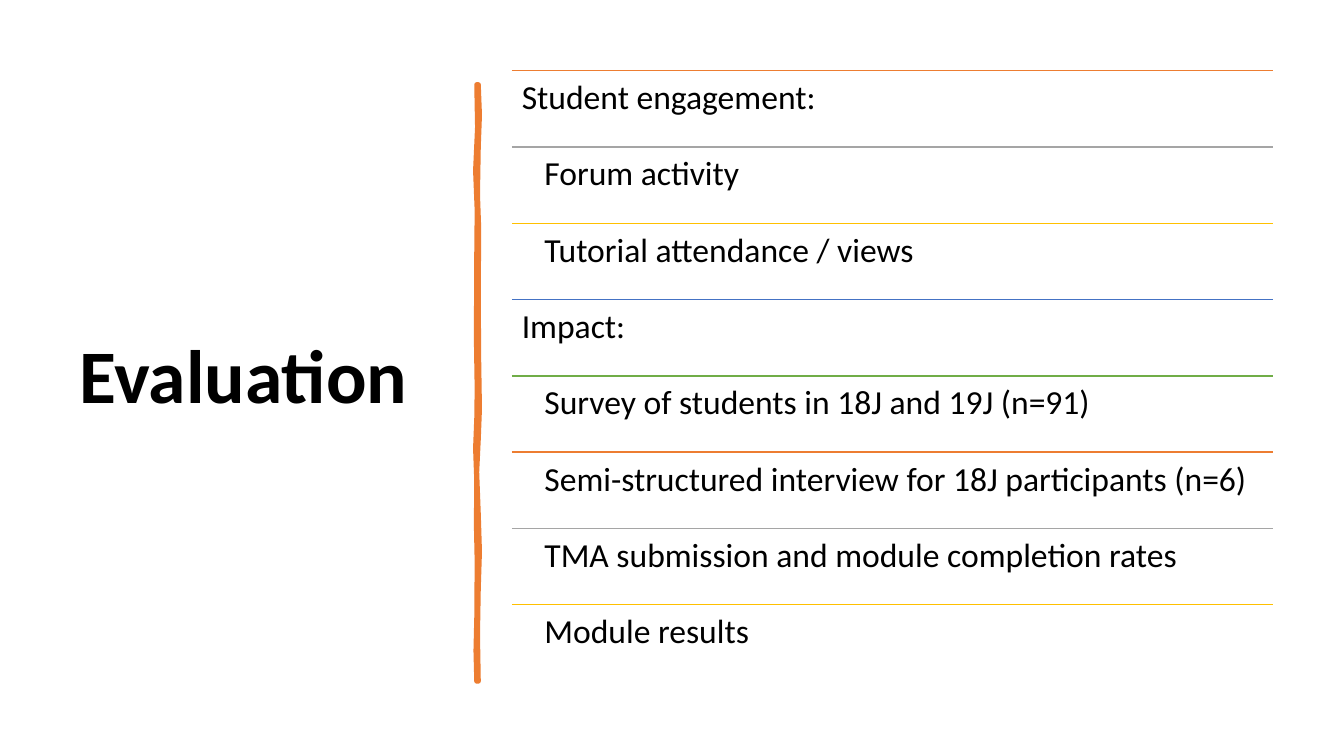
from lxml import etree
from pptx import Presentation
from pptx.dml.color import RGBColor
from pptx.enum.shapes import MSO_CONNECTOR
from pptx.enum.text import MSO_ANCHOR
from pptx.oxml.ns import qn
from pptx.util import Cm, Pt

STRAIGHT = MSO_CONNECTOR.STRAIGHT
TOP, MIDDLE = MSO_ANCHOR.TOP, MSO_ANCHOR.MIDDLE

# Content: (level, text)
TITLE = "Evaluation"
ROWS = [
    (0, "Student engagement:"),
    (1, "Forum activity"),
    (1, "Tutorial attendance / views"),
    (0, "Impact:"),
    (1, "Survey of students in 18J and 19J (n=91)"),
    (1, "Semi-structured interview for 18J participants (n=6)"),
    (1, "TMA submission and module completion rates"),
    (1, "Module results"),
]

# Theme
THEME = {
    "font": "Calibri",
    "ink": "000000",
    "bar": "ED7D31",
    "rules": ["ED7D31", "A5A5A5", "FFC000", "4472C4", "70AD47"],
    "title": 54,
    "body": 24,
}

# Layout in cm
LEFT, WIDTH = 12.9, 19.18
HEAD, FOOT = 1.78, 17.16
STEP = (FOOT - HEAD) / len(ROWS)
INSET, INDENT = 0.25, 0.57

# Hand-drawn bar: (x, y) down the right edge, then up the left edge
RIGHT = [(12.06, 2.13), (12.09, 2.9), (12.06, 3.7), (12.04, 4.9),
         (12.07, 5.74), (12.06, 7.47), (12.07, 9.04), (12.09, 10.3),
         (12.06, 11.07), (12.02, 11.9), (12.06, 12.95), (12.09, 13.9),
         (12.06, 14.83), (12.04, 16.0), (12.06, 17.17)]
BACK = [(12.01, 17.17), (11.99, 16.4), (12.01, 15.57), (12.02, 14.15),
        (12.0, 13.2), (12.01, 12.12), (11.98, 11.3), (12.01, 10.54),
        (12.02, 9.8), (12.0, 8.51), (12.01, 6.35), (12.02, 5.3),
        (11.98, 4.3), (12.03, 3.2), (12.01, 2.13)]


def color(code):
    return RGBColor.from_string(code)


def put_text(slide, text, box, size, bold=False, anchor=TOP, indent=0):
    frame = slide.shapes.add_textbox(*map(Cm, box)).text_frame
    look = {
        "word_wrap": True,
        "vertical_anchor": anchor,
        "margin_left": Cm(INSET + indent),
        "margin_right": Cm(INSET),
        "margin_top": Cm(INSET),
        "margin_bottom": Cm(INSET),
    }
    for key, value in look.items():
        setattr(frame, key, value)
    para = frame.paragraphs[0]
    para.line_spacing = 0.9
    run = para.add_run()
    run.text = text
    style = {"name": THEME["font"], "size": Pt(size), "bold": bold}
    for key, value in style.items():
        setattr(run.font, key, value)
    run.font.color.rgb = color(THEME["ink"])


def put_rule(slide, y, code):
    rule = slide.shapes.add_connector(
        STRAIGHT, Cm(LEFT), Cm(y), Cm(LEFT + WIDTH), Cm(y))
    rule.line.color.rgb = color(code)
    rule.line.width = Pt(1)
    etree.SubElement(rule._element.spPr, qn("a:effectLst"))


def put_bar(slide):
    first, *rest = [(Cm(x), Cm(y)) for x, y in RIGHT + BACK]
    path = slide.shapes.build_freeform(*first)
    path.add_line_segments(rest, close=True)
    bar = path.convert_to_shape()
    bar.shadow.inherit = False
    bar.fill.solid()
    bar.fill.fore_color.rgb = color(THEME["bar"])
    bar.line.color.rgb = color(THEME["bar"])
    bar.line.width = Pt(3.25)
    etree.SubElement(bar.line._get_or_add_ln(), qn("a:round"))


def main():
    deck = Presentation()
    deck.slide_width, deck.slide_height = Cm(33.87), Cm(19.05)
    slide = deck.slides.add_slide(deck.slide_layouts[6])

    # Title and bar
    put_text(slide, TITLE, (1.75, 1.78, 9.5, 15.52), THEME["title"],
             bold=True, anchor=MIDDLE)
    put_bar(slide)

    # Ruled list
    rules = THEME["rules"]
    for i, (level, text) in enumerate(ROWS):
        y = HEAD + i * STEP
        put_rule(slide, y, rules[i % len(rules)])
        put_text(slide, text, (LEFT, y, WIDTH, STEP), THEME["body"],
                 indent=level * INDENT)

    deck.save("out.pptx")


if __name__ == "__main__":
    main()
